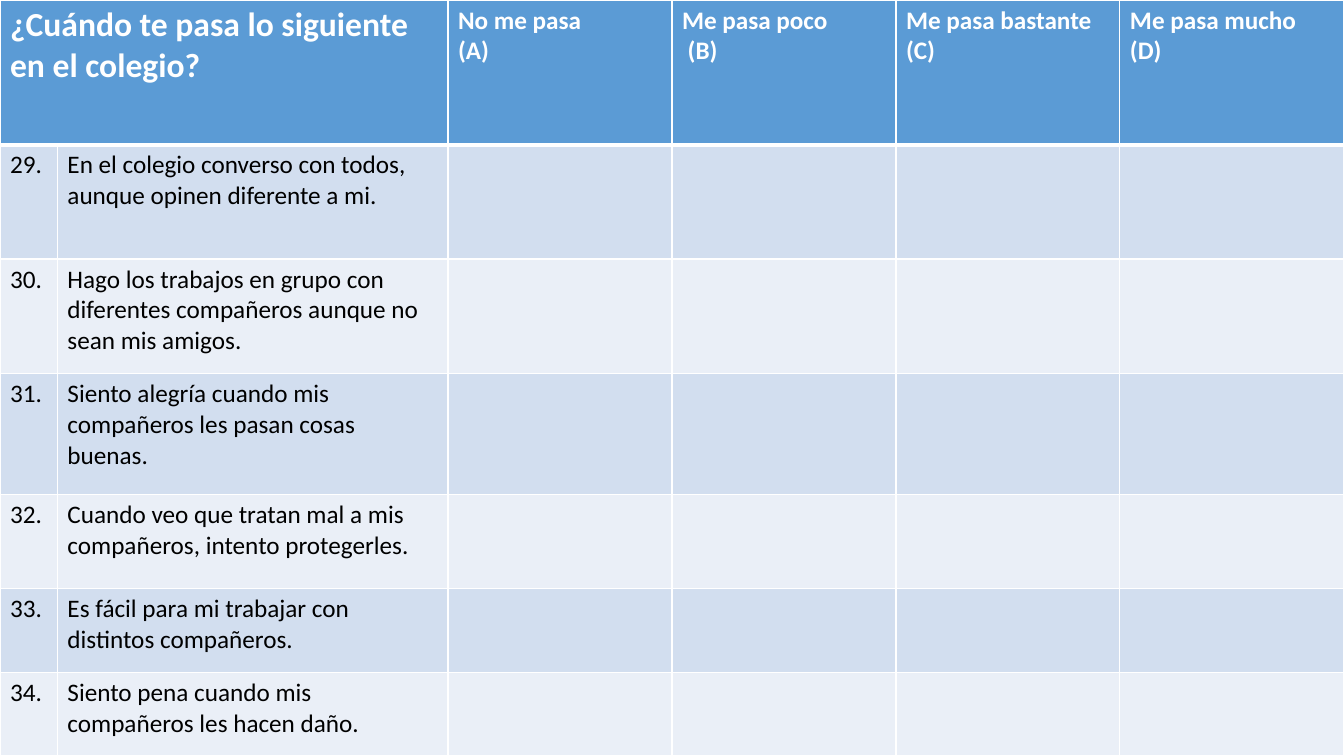
from lxml.etree import SubElement
from pptx import Presentation
from pptx.dml.color import RGBColor as RGB
from pptx.oxml.ns import qn
from pptx.util import Pt

WIDTHS = [41, 279] + [160] * 4
HEIGHTS = [103.5, 81.5, 82, 86.5, 67, 59.75, 59.75]
TITLE = "¿Cuándo te pasa lo siguiente en el colegio?"
SCALE = ["No me pasa\n(A)", "Me pasa poco\n (B)",
         "Me pasa bastante\n(C)", "Me pasa mucho\n(D)"]
FIRST = 29
ITEMS = [
    "En el colegio converso con todos, aunque opinen diferente a mi.",
    "Hago los trabajos en grupo con diferentes compañeros aunque no sean mis amigos.",
    "Siento alegría cuando mis compañeros les pasan cosas buenas.",
    "Cuando veo que tratan mal a mis compañeros, intento protegerles.",
    "Es fácil para mi trabajar con distintos compañeros.",
    "Siento pena cuando mis compañeros les hacen daño.",
]
WHITE, BLACK, BLUE = "FFFFFF", "000000", "5B9BD5"
BANDS = ["D2DEEF", "EAEFF7"]


def color(code):
    return RGB.from_string(code)


def set_edges(cell, top, bottom):
    """Draw white borders; top and bottom widths are in points."""
    props = cell._tc.get_or_add_tcPr()
    for side, width in zip("LRTB", (1, 1, top, bottom)):
        line = SubElement(props, qn(f"a:ln{side}"), w=str(Pt(width)))
        fill = SubElement(line, qn("a:solidFill"))
        SubElement(fill, qn("a:srgbClr"), val=WHITE)


def paint(cell, code):
    cell.fill.solid()
    cell.fill.fore_color.rgb = color(code)


def write(cell, text, size, code, bold):
    cell.text_frame.text = text
    for para in cell.text_frame.paragraphs:
        for run in para.runs:
            font = run.font
            font.name, font.size, font.bold = "Calibri", Pt(size), bold
            font.color.rgb = color(code)


def add_grid(slide):
    """Add the table with its sizes, fills and borders, but no text."""
    frame = slide.shapes.add_table(len(HEIGHTS), len(WIDTHS), 0, 0,
                                   Pt(sum(WIDTHS)), Pt(sum(HEIGHTS)))
    table = frame.table
    for col, width in zip(table.columns, WIDTHS):
        col.width = Pt(width)
    for i, (row, height) in enumerate(zip(table.rows, HEIGHTS)):
        row.height = Pt(height)
        for cell in row.cells:
            set_edges(cell, 3 if i == 1 else 1, 3 if i == 0 else 1)
            paint(cell, BANDS[(i - 1) % 2] if i else BLUE)
    return table


def main():
    deck = Presentation()
    deck.slide_width, deck.slide_height = Pt(960), Pt(540)
    table = add_grid(deck.slides.add_slide(deck.slide_layouts[6]))
    table.cell(0, 0).merge(table.cell(0, 1))
    write(table.cell(0, 0), TITLE, 24, WHITE, True)
    for col, label in enumerate(SCALE, 2):
        write(table.cell(0, col), label, 18, WHITE, True)
    for row, item in enumerate(ITEMS, 1):
        write(table.cell(row, 0), f"{FIRST + row - 1}.", 18, BLACK, False)
        write(table.cell(row, 1), item, 18, BLACK, False)
    deck.save("out.pptx")


if __name__ == "__main__":
    main()
